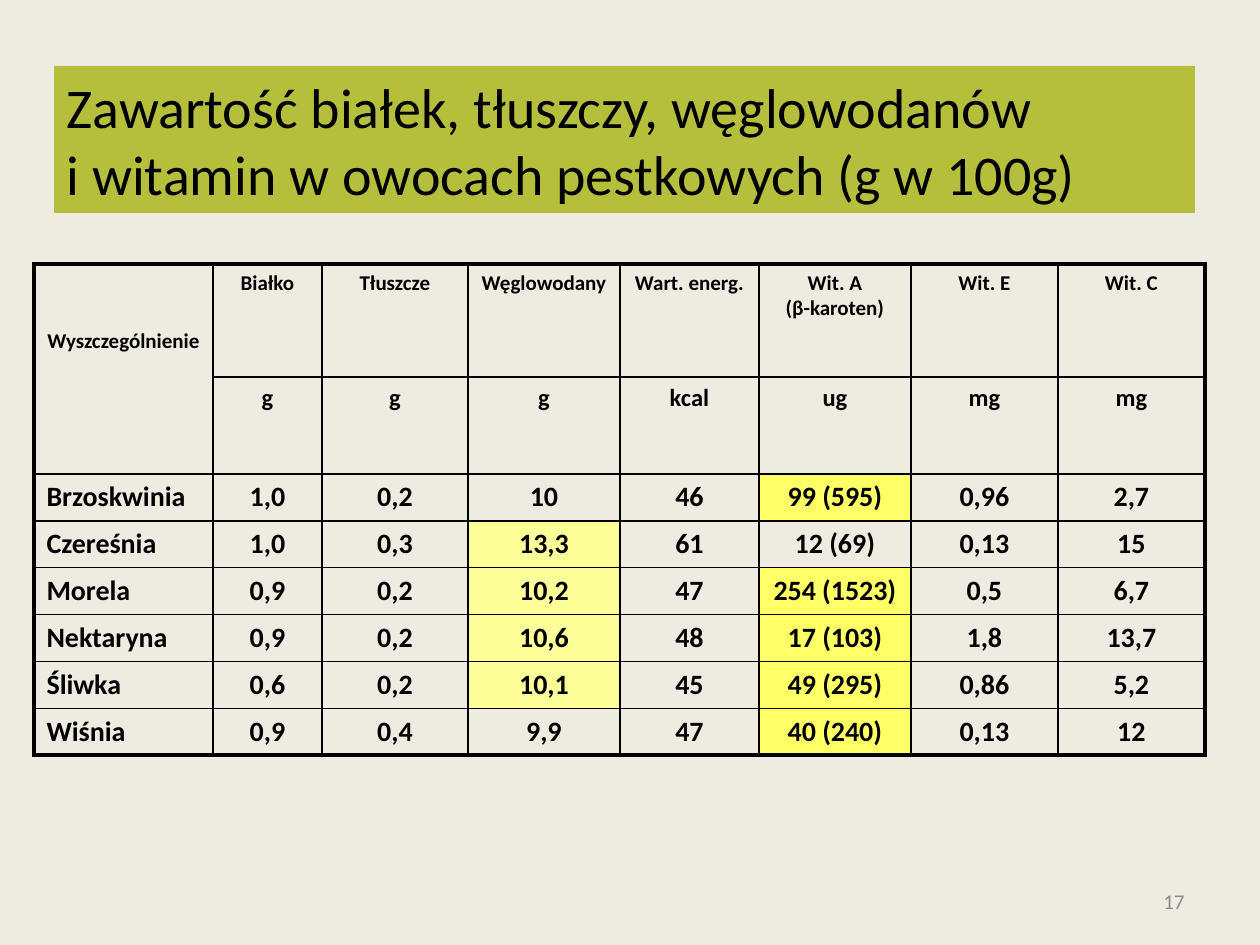
from lxml import etree
from pptx import Presentation
from pptx.dml.color import RGBColor
from pptx.enum.text import MSO_ANCHOR, MSO_AUTO_SIZE, PP_ALIGN
from pptx.oxml.ns import qn
from pptx.util import Emu, Pt

LEFT, MID, RIGHT = PP_ALIGN.LEFT, PP_ALIGN.CENTER, PP_ALIGN.RIGHT
TOP, CENTER = MSO_ANCHOR.TOP, MSO_ANCHOR.MIDDLE
FIXED = MSO_AUTO_SIZE.NONE

TITLE = "Zawartość białek, tłuszczy, węglowodanów\vi witamin w owocach pestkowych (g w 100g)"
ROWS = [
    ["Wyszczególnienie", "Białko", "Tłuszcze", "Węglowodany", "Wart. energ.",
     "Wit. A\n(β-karoten)", "Wit. E", "Wit. C"],
    ["", "g", "g", "g", "kcal", "ug", "mg", "mg"],
    ["Brzoskwinia", "1,0", "0,2", "10", "46", "99 (595)", "0,96", "2,7"],
    ["Czereśnia", "1,0", "0,3", "13,3", "61", "12 (69)", "0,13", "15"],
    ["Morela", "0,9", "0,2", "10,2", "47", "254 (1523)", "0,5", "6,7"],
    ["Nektaryna", "0,9", "0,2", "10,6", "48", "17 (103)", "1,8", "13,7"],
    ["Śliwka", "0,6", "0,2", "10,1", "45", "49 (295)", "0,86", "5,2"],
    ["Wiśnia", "0,9", "0,4", "9,9", "47", "40 (240)", "0,13", "12"],
]
WIDTHS = [179, 109, 146, 152, 139, 152, 147, 147]
HEIGHTS = [113, 97] + [46] * 6
SIZES = [12, 14] + [16] * 6
MARKS = {(row, 3): "FFFF99" for row in (3, 4, 5, 6)}
MARKS.update({(row, 5): "FFFF66" for row in (2, 4, 5, 6, 7)})


def px(num):
    return Emu(round(num * 914400 / 126))


def color(code):
    return RGBColor.from_string(code)


class Deck:
    """Holds the style and the current slide."""

    font, ink, paper, band, gray = "Calibri", "000000", "EEECE1", "B6BF3B", "8C8C8C"
    thin, thick = 1, 2.25

    def __init__(self):
        self.file = Presentation()
        self.file.slide_width, self.file.slide_height = px(1260), px(945)
        self.slide = self.file.slides.add_slide(self.file.slide_layouts[5])
        fill = self.slide.background.fill
        fill.solid()
        fill.fore_color.rgb = color(self.paper)

    def text(self, frame, words, size, align, ink=None, bold=False):
        frame.text = words
        for para in frame.paragraphs:
            para.alignment = align
            for run in para.runs:
                run.font.name, run.font.size, run.font.bold = self.font, Pt(size), bold
                run.font.color.rgb = color(ink or self.ink)

    def title(self, words, left, top, width, height):
        shape = self.slide.shapes.title
        shape.left, shape.top, shape.width, shape.height = map(px, (left, top, width, height))
        shape.fill.solid()
        shape.fill.fore_color.rgb = color(self.band)
        frame = shape.text_frame
        frame.auto_size, frame.vertical_anchor = FIXED, TOP
        self.text(frame, words, 32, LEFT)

    def label(self, words, left, top, width, height):
        frame = self.slide.shapes.add_textbox(*map(px, (left, top, width, height))).text_frame
        frame.word_wrap, frame.vertical_anchor = True, CENTER
        self.text(frame, words, 12, RIGHT, self.gray)

    def edge(self, cell, side, width):
        line = etree.SubElement(cell._tc.get_or_add_tcPr(), qn("a:ln" + side), w=str(Pt(width)))
        fill = etree.SubElement(line, qn("a:solidFill"))
        etree.SubElement(fill, qn("a:srgbClr"), val=self.ink)

    def table(self, left, top, rows, widths, heights, sizes, marks):
        high, wide = len(rows), len(widths)
        grid = self.slide.shapes.add_table(
            high, wide, *map(px, (left, top, sum(widths), sum(heights)))).table
        grid.first_row = grid.horz_banding = False
        for col, width in zip(grid.columns, widths):
            col.width = px(width)
        for row, height in zip(grid.rows, heights):
            row.height = px(height)
        for y, row in enumerate(rows):
            for x, words in enumerate(row):
                cell = grid.cell(y, x)
                align = LEFT if x == 0 and y > 1 else MID
                self.text(cell.text_frame, words, sizes[y], align, bold=True)
                outer = {"L": x == 0, "R": x == wide - 1, "T": y == 0, "B": y == high - 1}
                for side, rim in outer.items():
                    self.edge(cell, side, self.thick if rim else self.thin)
                if (y, x) in marks:
                    cell.fill.solid()
                    cell.fill.fore_color.rgb = color(marks[y, x])
                else:
                    cell.fill.background()
        head = grid.cell(0, 0)
        head.merge(grid.cell(1, 0))
        head.margin_top = px(65)


def main():
    deck = Deck()
    deck.table(34, 264, ROWS, WIDTHS, HEIGHTS, SIZES, MARKS)
    deck.title(TITLE, 54, 66, 1141, 147)
    deck.label("17", 903, 876, 294, 50)
    deck.file.save("out.pptx")


if __name__ == "__main__":
    main()
